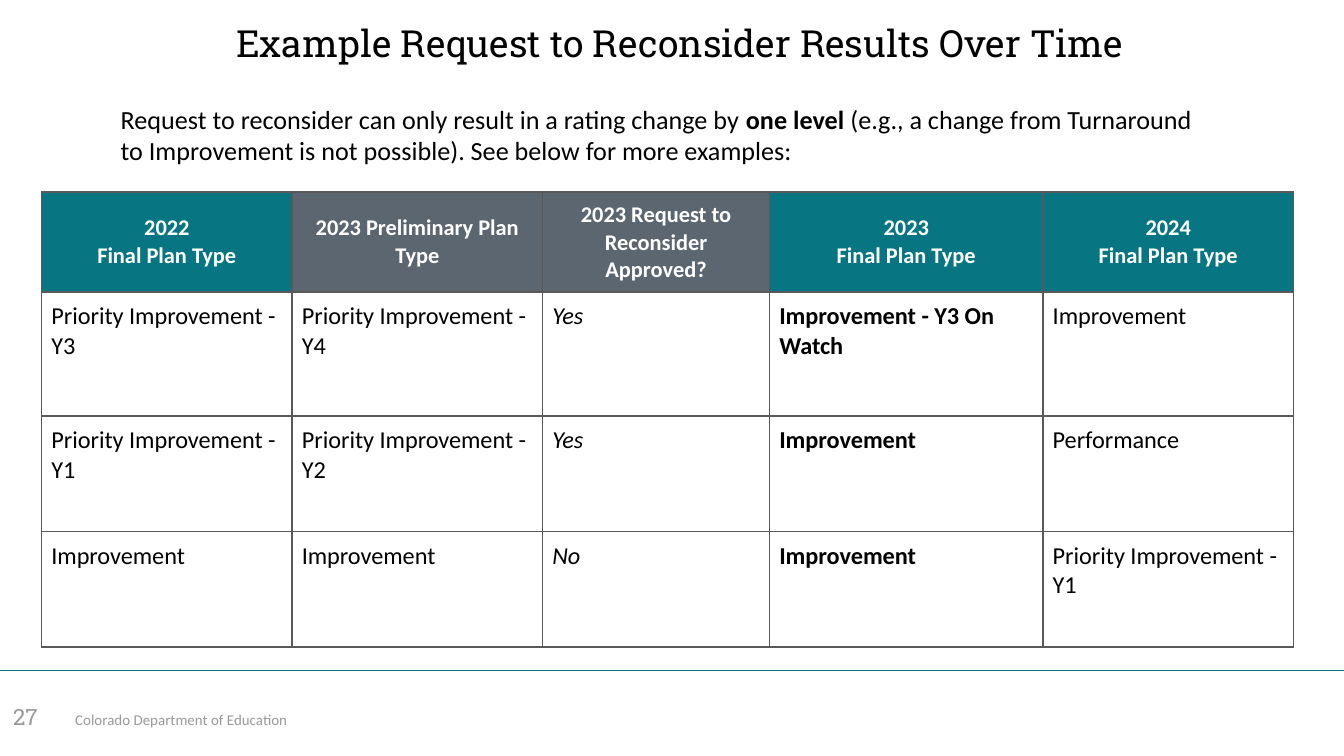
from lxml.etree import SubElement
from pptx import Presentation
from pptx.dml.color import RGBColor
from pptx.enum.shapes import MSO_CONNECTOR as CONN
from pptx.enum.text import MSO_ANCHOR as ANCHOR, PP_ALIGN as ALIGN
from pptx.oxml.ns import qn
from pptx.util import Pt

TEAL, SLATE, BORDER = "077682", "5C6670", "595959"
GREY, WHITE, BLACK = "999999", "FFFFFF", "000000"
COL_WIDTHS = [134.2, 134.2, 121.6, 146.5, 134.2]
ROW_HEIGHTS = [47.5, 66.4, 61.9, 61.9]
HEADERS = [
    ("2022\nFinal Plan Type", TEAL),
    ("2023 Preliminary Plan Type", SLATE),
    ("2023 Request to Reconsider Approved?", SLATE),
    ("2023\nFinal Plan Type", TEAL),
    ("2024\nFinal Plan Type", TEAL),
]
ROWS = [
    ["Priority Improvement - Y3", "Priority Improvement - Y4", "Yes",
     "Improvement - Y3 On Watch", "Improvement"],
    ["Priority Improvement - Y1", "Priority Improvement - Y2", "Yes",
     "Improvement", "Performance"],
    ["Improvement", "Improvement", "No",
     "Improvement", "Priority Improvement - Y1"],
]
APPROVED_COL, FINAL_COL = 2, 3


def rgb(color):
    return RGBColor.from_string(color)


def write(tf, text, size=13, font="Calibri", color=BLACK, bold=False,
          italic=False, align=ALIGN.LEFT, anchor=ANCHOR.TOP, inset=0):
    """Fill a text frame or cell frame; newlines split paragraphs, ** toggles bold."""
    tf.word_wrap = True
    tf.vertical_anchor = anchor
    tf.margin_left = tf.margin_right = tf.margin_top = tf.margin_bottom = Pt(inset)
    for i, line in enumerate(text.split("\n")):
        p = tf.add_paragraph() if i else tf.paragraphs[0]
        p.alignment = align
        for j, part in enumerate(line.split("**")):
            r = p.add_run()
            r.text = part
            r.font.name, r.font.size = font, Pt(size)
            r.font.bold, r.font.italic = bold or j % 2 == 1, italic
            r.font.color.rgb = rgb(color)


def set_borders(cell, color, width):
    tc_pr = cell._tc.get_or_add_tcPr()
    for side in ("a:lnL", "a:lnR", "a:lnT", "a:lnB"):
        ln = SubElement(tc_pr, qn(side), w=str(Pt(width)))
        SubElement(SubElement(ln, qn("a:solidFill")), qn("a:srgbClr"), val=color)


class Deck:
    slab = "Roboto Slab"
    cell_inset = 5.2

    def __init__(self, width, height):
        self.prs = Presentation()
        self.prs.slide_width, self.prs.slide_height = Pt(width), Pt(height)
        self.s = self.prs.slides.add_slide(self.prs.slide_layouts[6])

    def text(self, x, y, w, h, text, **fmt):
        box = self.s.shapes.add_textbox(Pt(x), Pt(y), Pt(w), Pt(h))
        write(box.text_frame, text, **fmt)

    def rule(self, x1, y1, x2, y2, color, width):
        line = self.s.shapes.add_connector(CONN.STRAIGHT, Pt(x1), Pt(y1), Pt(x2), Pt(y2))
        line.line.color.rgb = rgb(color)
        line.line.width = Pt(width)
        SubElement(line._element.spPr, qn("a:effectLst"))

    def cell(self, cell, text, fill=None, **fmt):
        write(cell.text_frame, text, inset=self.cell_inset, **fmt)
        # Cell margins and anchor belong to the cell, not to its text frame
        cell.margin_left = cell.margin_right = Pt(self.cell_inset)
        cell.margin_top = cell.margin_bottom = Pt(self.cell_inset)
        cell.vertical_anchor = fmt.get("anchor", ANCHOR.TOP)
        set_borders(cell, BORDER, 1)
        if fill:
            cell.fill.solid()
            cell.fill.fore_color.rgb = rgb(fill)
        else:
            cell.fill.background()

    def table(self, x, y, widths, heights, headers, rows):
        table = self.s.shapes.add_table(
            len(heights), len(widths), Pt(x), Pt(y), Pt(sum(widths)), Pt(sum(heights))).table
        for col, width in zip(table.columns, widths):
            col.width = Pt(width)
        for row, height in zip(table.rows, heights):
            row.height = Pt(height)
        for c, (text, fill) in enumerate(headers):
            self.cell(table.cell(0, c), text, fill, size=12, color=WHITE, bold=True,
                      align=ALIGN.CENTER, anchor=ANCHOR.MIDDLE)
        for r, row in enumerate(rows, 1):
            for c, text in enumerate(row):
                self.cell(table.cell(r, c), text,
                          bold=c == FINAL_COL, italic=c == APPROVED_COL)


def main():
    deck = Deck(720, 405)
    deck.text(40.3, 380.9, 232.6, 9.4, "Colorado Department of Education", size=8, color=GREY)
    deck.rule(0, 359.3, 720, 359.3, TEAL, 0.75)
    deck.text(7, 368.2, 43.2, 31, "27", size=12, font=deck.slab, color=GREY,
              anchor=ANCHOR.MIDDLE)
    deck.table(22.3, 102.8, COL_WIDTHS, ROW_HEIGHTS, HEADERS, ROWS)
    deck.text(15.1, 3.6, 698.4, 38.9, "Example Request to Reconsider Results Over Time",
              size=20, font=deck.slab, align=ALIGN.CENTER, inset=7.2)
    deck.text(57.6, 48.2, 600.5, 48.2,
              "Request to reconsider can only result in a rating change by **one level** "
              "(e.g., a change from Turnaround to Improvement is not possible). "
              "See below for more examples:", size=14, inset=7.2)
    deck.prs.save("out.pptx")


if __name__ == "__main__":
    main()
